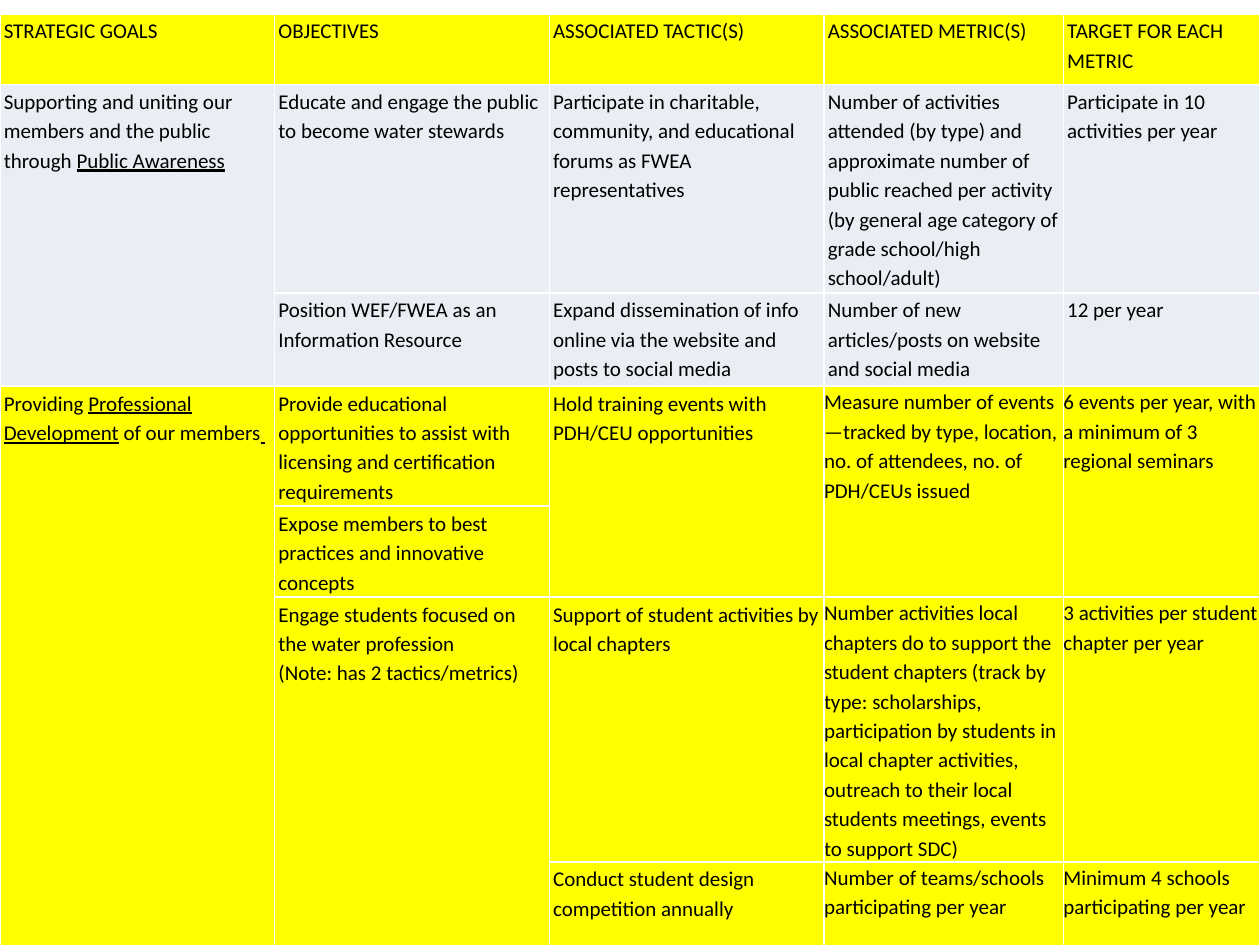
from lxml.etree import SubElement
from pptx import Presentation
from pptx.dml.color import RGBColor
from pptx.oxml.ns import qn
from pptx.util import Inches, Pt

YELLOW, PALE, WHITE, BLACK = "FFFF00", "E9EDF4", "FFFFFF", "000000"
COLUMN_WIDTHS = [2.18, 2.18, 2.18, 1.9, 1.56]
ROW_HEIGHTS = [0.56, 1.61, 0.74, 0.91, 0.56, 2.09, 0.7]
ROW_FILLS = [YELLOW, PALE, PALE, YELLOW, YELLOW, YELLOW, YELLOW]
FIRST_TIGHT_ROW, FIRST_TIGHT_COLUMN = 3, 3
UNDERLINE_MARK = "_"
PLAN = [
    ["STRATEGIC GOALS", "OBJECTIVES", "ASSOCIATED TACTIC(S)",
     "ASSOCIATED METRIC(S)", "TARGET FOR EACH METRIC"],
    ["Supporting and uniting our members and the public through _Public Awareness_",
     "Educate and engage the public to become water stewards",
     "Participate in charitable, community, and educational forums as FWEA representatives",
     "Number of activities attended (by type) and approximate number of public reached "
     "per activity (by general age category of grade school/high school/adult)",
     "Participate in 10 activities per year"],
    [None, "Position WEF/FWEA as an Information Resource",
     "Expand dissemination of info online via the website and posts to social media",
     "Number of new articles/posts on website and social media", "12 per year"],
    ["Providing _Professional Development_ of our members_ _",
     "Provide educational opportunities to assist with licensing and certification requirements",
     "Hold training events with PDH/CEU opportunities",
     "Measure number of events—tracked by type, location, no. of attendees, "
     "no. of PDH/CEUs issued",
     "6 events per year, with a minimum of 3 regional seminars"],
    [None, "Expose members to best practices and innovative concepts", None, None, None],
    [None, "Engage students focused on the water profession\n(Note: has 2 tactics/metrics)",
     "Support of student activities by local chapters",
     "Number activities local chapters do to support the student chapters (track by type: "
     "scholarships, participation by students in local chapter activities, outreach to "
     "their local students meetings, events to support SDC)",
     "3 activities per student chapter per year"],
    [None, None, "Conduct student design competition annually",
     "Number of teams/schools participating per year",
     "Minimum 4 schools participating per year"],
]


def color(value):
    return RGBColor.from_string(value)


def style_cell(cell, fill, tight):
    properties = cell._tc.get_or_add_tcPr()
    for side in ("a:lnL", "a:lnR", "a:lnT", "a:lnB"):
        line = SubElement(properties, qn(side), w=str(Pt(1)))
        SubElement(SubElement(line, qn("a:solidFill")), qn("a:srgbClr"), val=WHITE)
    cell.fill.solid()
    cell.fill.fore_color.rgb = color(fill)
    cell.margin_left = cell.margin_right = Inches(0 if tight else 0.03)
    cell.margin_top = cell.margin_bottom = Inches(0 if tight else 0.01)


def write_cell(cell, text):
    frame = cell.text_frame
    for number, content in enumerate(text.split("\n")):
        paragraph = frame.add_paragraph() if number else frame.paragraphs[0]
        paragraph.line_spacing = 1.15
        for index, part in enumerate(content.split(UNDERLINE_MARK)):
            if part:
                span = paragraph.add_run()
                span.text = part
                span.font.name = "Calibri"
                span.font.size = Pt(12)
                span.font.bold = False
                span.font.color.rgb = color(BLACK)
                span.font.underline = index % 2 == 1


def fill_table(table):
    for column, width in zip(table.columns, COLUMN_WIDTHS):
        column.width = Inches(width)
    for row, height in zip(table.rows, ROW_HEIGHTS):
        row.height = Inches(height)
    for r, texts in enumerate(PLAN):
        for c, text in enumerate(texts):
            cell = table.cell(r, c)
            tight = r >= FIRST_TIGHT_ROW and c >= FIRST_TIGHT_COLUMN
            style_cell(cell, ROW_FILLS[r], tight)
            if text is not None:
                write_cell(cell, text)
                last = r
                while last + 1 < len(PLAN) and PLAN[last + 1][c] is None:
                    last += 1
                if last > r:
                    cell.merge(table.cell(last, c))


def main():
    """Build the strategic plan table on one slide."""
    deck = Presentation()
    deck.slide_width, deck.slide_height = Inches(10), Inches(7.5)
    page = deck.slides.add_slide(deck.slide_layouts[6])
    frame = page.shapes.add_table(
        len(PLAN), len(COLUMN_WIDTHS), 0, Inches(0.11),
        deck.slide_width, Inches(sum(ROW_HEIGHTS)))
    frame.table.first_row = False
    frame.table.horz_banding = False
    fill_table(frame.table)
    deck.save("out.pptx")


if __name__ == "__main__":
    main()
